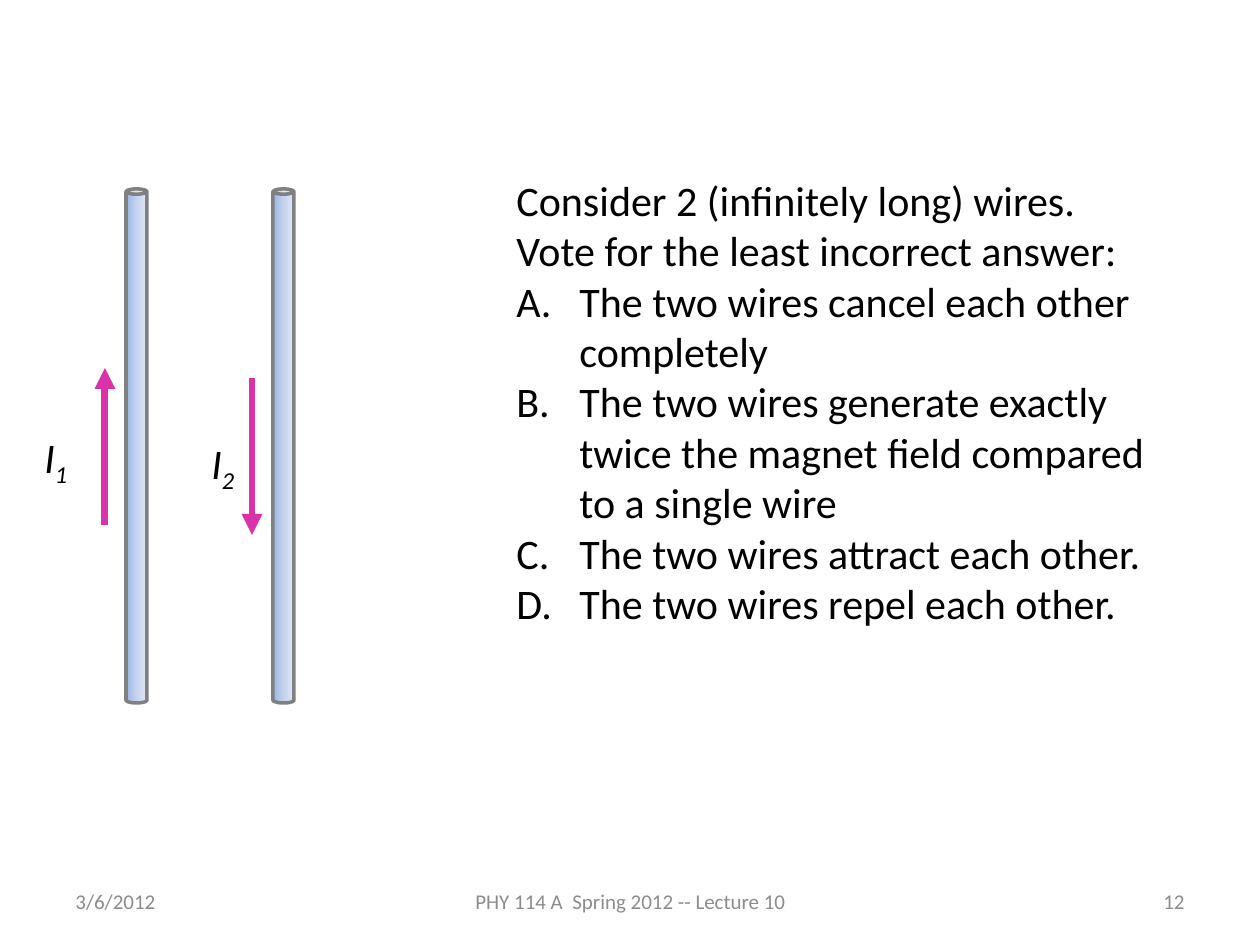
import copy

import pptx
import pptx.dml.color
import pptx.enum.dml
import pptx.enum.shapes
import pptx.enum.text
import pptx.oxml.ns
import pptx.util
from lxml import etree

PX = 914400 / 126
FONT = "Calibri"
BLACK, GREY, MAGENTA, WIRE_EDGE = "000000", "8C8C8C", "DA32AA", "808080"
WIRE_STOPS = [(0, "9AB5E4"), (0.5, "C2D1ED"), (1, "E1E8F5")]
ALIGN = pptx.enum.text.PP_ALIGN
FOOTERS = [
    ((63, 876, 294, 50), "3/6/2012", ALIGN.LEFT),
    ((431, 876, 399, 50), "PHY 114 A  Spring 2012 -- Lecture 10", ALIGN.CENTER),
    ((903, 876, 294, 50), "12", ALIGN.RIGHT),
]
QUESTION = "Consider 2 (infinitely long) wires.  Vote for the least incorrect answer:"
ANSWERS = [
    "The two wires cancel each other completely",
    "The two wires generate exactly twice the magnet field compared to a single wire",
    "The two wires attract each other.",
    "The two wires repel each other.",
]


def px(*values):
    return [pptx.util.Emu(round(v * PX)) for v in values]


def color(value):
    return pptx.dml.color.RGBColor.from_string(value)


def sub(parent, tag, **attrs):
    return etree.SubElement(parent, pptx.oxml.ns.qn(tag), attrs)


def add_box(slide, box, anchor="TOP", grow=True):
    tf = slide.shapes.add_textbox(*px(*box)).text_frame
    size = pptx.enum.text.MSO_AUTO_SIZE
    settings = {
        "word_wrap": True,
        "vertical_anchor": pptx.enum.text.MSO_ANCHOR[anchor],
        "auto_size": size.SHAPE_TO_FIT_TEXT if grow else size.NONE,
    }
    for name, value in settings.items():
        setattr(tf, name, value)
    return tf


def add_run(p, text, size=24, fill=BLACK, **formats):
    r = p.add_run()
    r.text = text
    r.font.color.rgb = color(fill)
    for name, value in {"name": FONT, "size": pptx.util.Pt(size), **formats}.items():
        setattr(r.font, name, value)
    return r


def add_footer(slide, box, text, align):
    p = add_box(slide, box, "MIDDLE", grow=False).paragraphs[0]
    p.alignment = align
    add_run(p, text, 12, GREY)


def add_wire(slide, left):
    can = pptx.enum.shapes.MSO_SHAPE.CAN
    sp = slide.shapes.add_shape(can, *px(left, 189, 21, 514))
    sp.shadow.inherit = False
    sp.fill.gradient()
    sp.fill.gradient_angle = 0
    first = sp.fill._fill._gradFill.gsLst[0]
    first.addnext(copy.deepcopy(first))
    for stop, (position, value) in zip(sp.fill.gradient_stops, WIRE_STOPS):
        stop.position = position
        stop.color.rgb = color(value)
    sp.line.color.rgb = color(WIRE_EDGE)
    sp.line.width = pptx.util.Pt(2)


def add_arrow(slide, x, start, end):
    straight = pptx.enum.shapes.MSO_CONNECTOR.STRAIGHT
    s = slide.shapes.add_connector(straight, *px(x, start, x, end))
    s.line.color.rgb = color(MAGENTA)
    s.line.width = pptx.util.Pt(4)
    sub(s.line._get_or_add_ln(), "a:tailEnd", type="triangle")
    sub(s._element.spPr, "a:effectLst")


def add_current_label(slide, box, index):
    p = add_box(slide, box).paragraphs[0]
    add_run(p, "I", italic=True)
    r = add_run(p, index, italic=True)
    r.font._element.set("baseline", "-25000")


def add_question(slide, box):
    tf = add_box(slide, box)
    add_run(tf.paragraphs[0], QUESTION)
    indent = px(63)[0]
    for answer in ANSWERS:
        p = tf.add_paragraph()
        pPr = p._p.get_or_add_pPr()
        pPr.set("marL", str(indent))
        pPr.set("indent", str(-indent))
        sub(pPr, "a:buFont", typeface="+mj-lt")
        sub(pPr, "a:buAutoNum", type="alphaUcPeriod")
        add_run(p, answer)


def main():
    prs = pptx.Presentation()
    prs.slide_width, prs.slide_height = px(1260, 945)
    slide = prs.slides.add_slide(prs.slide_layouts[6])
    for footer in FOOTERS:
        add_footer(slide, *footer)
    for left in (126, 273):
        add_wire(slide, left)
    add_arrow(slide, 105, 525, 368)
    add_arrow(slide, 252, 378, 535)
    add_current_label(slide, (32, 425, 73, 63), "1")
    add_current_label(slide, (199, 431, 63, 63), "2")
    add_question(slide, (504, 168, 662, 522))
    prs.save("out.pptx")


if __name__ == "__main__":
    main()
